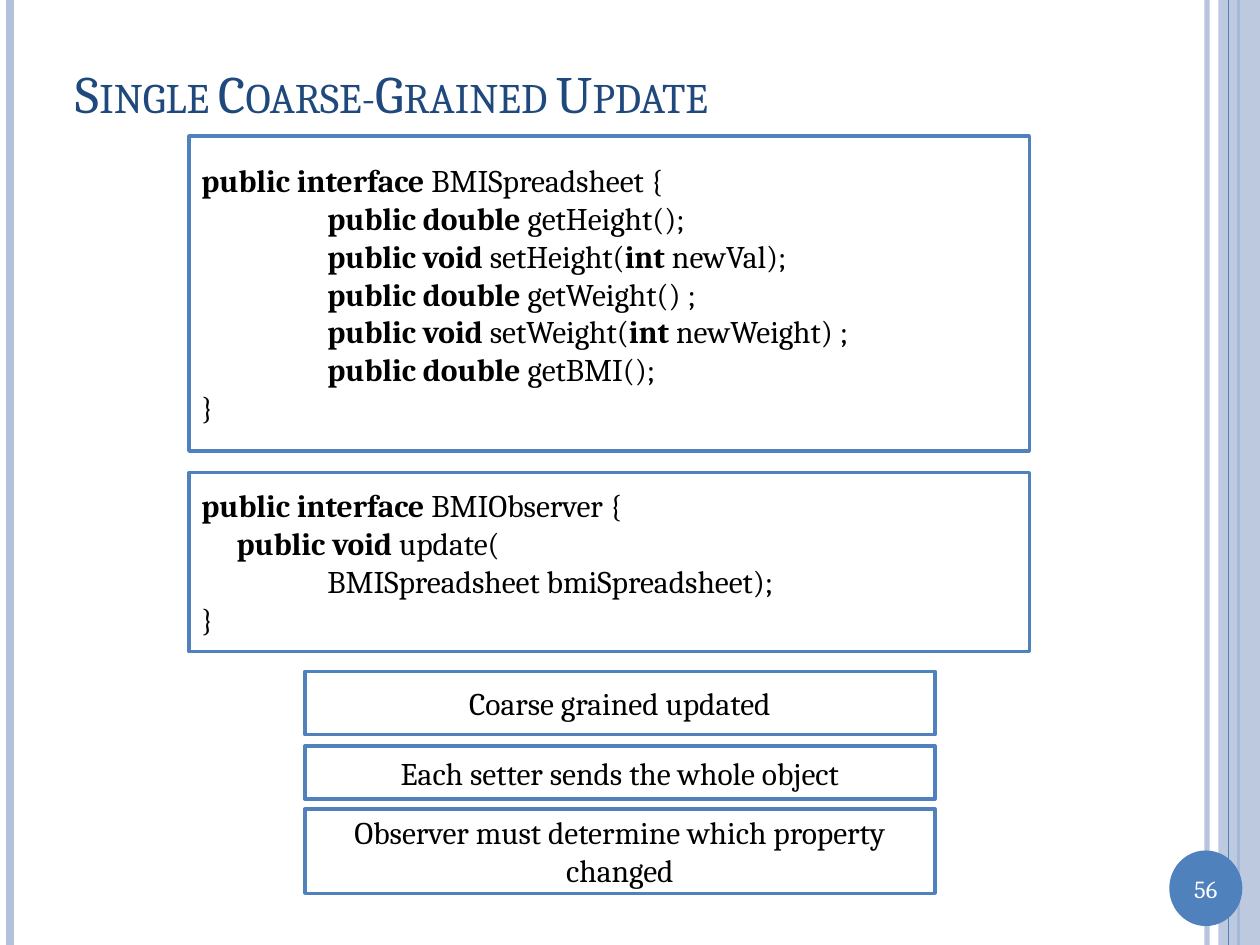
import pptx
import pptx.util
import pptx.dml.color
import pptx.enum.shapes
import pptx.enum.text
import pptx.oxml
import pptx.oxml.ns
from pptx.util import Inches

COLORS = {
    "blue": "4F81BD",
    "pale": "B3C1DB",
    "title": "1F497D",
    "white": "FFFFFF",
    "black": "000000",
}
FONT = "Cambria"
SHAPES = pptx.enum.shapes.MSO_SHAPE
ALIGN = pptx.enum.text.PP_ALIGN
MIDDLE = pptx.enum.text.MSO_ANCHOR.MIDDLE

SPREADSHEET_CODE = [
    (0, "**public interface **BMISpreadsheet {"),
    (1, "**public double **getHeight();"),
    (1, "**public void **setHeight(**int **newVal);"),
    (1, "**public double **getWeight() ;"),
    (1, "**public void **setWeight(**int **newWeight) ;"),
    (1, "**public double **getBMI();"),
    (0, "}"),
]
OBSERVER_CODE = [
    (0, "**public interface **BMIObserver {"),
    (0.28, "**public void** update("),
    (1, "BMISpreadsheet bmiSpreadsheet);"),
    (0, "}"),
]
NOTES = [
    (5.33, 0.5, "Coarse grained updated"),
    (5.92, 0.42, "Each setter sends the whole object"),
    (6.42, 0.67, "Observer must determine which property changed"),
]


def rgb(name):
    return pptx.dml.color.RGBColor.from_string(COLORS[name])


def style_run(r, size, color, bold=False):
    r.font.name = FONT
    r.font.size = pptx.util.Pt(size)
    r.font.bold = bold
    r.font.color.rgb = rgb(color)


def set_alpha(sp, percent):
    clr = next(sp._element.spPr.iter(pptx.oxml.ns.qn("a:srgbClr")))
    alpha = pptx.oxml.parse_xml(
        f'<a:alpha {pptx.oxml.ns.nsdecls("a")} val="{percent * 1000}"/>')
    clr.append(alpha)


def add_box(s, box, fill, line=None, kind=SHAPES.RECTANGLE):
    sp = s.shapes.add_shape(kind, *map(Inches, box))
    sp.shadow.inherit = False
    sp.fill.solid()
    sp.fill.fore_color.rgb = rgb(fill)
    if line:
        sp.line.color.rgb = rgb(line)
        sp.line.width = pptx.util.Pt(2)
    else:
        sp.line.fill.background()
    sp.text_frame.word_wrap = True
    sp.text_frame.vertical_anchor = MIDDLE
    return sp


def add_rule(s, x, height, color, width):
    ln = s.shapes.add_connector(pptx.enum.shapes.MSO_CONNECTOR.STRAIGHT,
                                Inches(x), 0, Inches(x), Inches(height))
    ln.line.color.rgb = rgb(color)
    ln.line.width = pptx.util.Pt(width)
    ln._element.spPr.append(
        pptx.oxml.parse_xml(f'<a:effectLst {pptx.oxml.ns.nsdecls("a")}/>'))
    return ln


def add_side_bands(s, height):
    set_alpha(add_rule(s, 9.58, height, "pale", 3), 93)
    add_rule(s, 0.08, height, "pale", 4.5)
    add_rule(s, 9.83, height, "blue", 1.5)
    set_alpha(add_box(s, (9.67, 0, 0.33, height), "pale"), 87)
    add_rule(s, 9.75, height, "blue", 0.75)


def add_page_number(s, box, number):
    sp = add_box(s, box, "blue", kind=SHAPES.OVAL)
    tf = sp.text_frame
    tf.margin_left = tf.margin_right = 0
    tf.text = number
    p = tf.paragraphs[0]
    p.alignment = ALIGN.CENTER
    style_run(p.runs[0], 14, "white")


def add_title(s, box, text):
    sp = s.shapes.title
    sp.left, sp.top, sp.width, sp.height = map(Inches, box)
    tf = sp.text_frame
    tf.text = text
    tf.vertical_anchor = MIDDLE
    p = tf.paragraphs[0]
    p.alignment = ALIGN.LEFT
    r = p.runs[0]
    style_run(r, 30, "title")
    r.font._element.set("cap", "small")


def add_code(s, box, lines):
    tf = add_box(s, box, "white", "blue").text_frame
    for i, (indent, line) in enumerate(lines):
        p = tf.add_paragraph() if i else tf.paragraphs[0]
        p.alignment = ALIGN.LEFT
        p._p.get_or_add_pPr().set("marL", str(Inches(indent)))
        for j, part in enumerate(line.split("**")):
            if part:
                r = p.add_run()
                r.text = part
                style_run(r, 18, "black", bold=j % 2 == 1)


def add_note(s, box, text):
    tf = add_box(s, box, "white", "blue").text_frame
    tf.text = text
    p = tf.paragraphs[0]
    p.alignment = ALIGN.CENTER
    style_run(p.runs[0], 18, "black")


def main():
    prs = pptx.Presentation()
    prs.slide_width, prs.slide_height = Inches(10), Inches(7.5)
    s = prs.slides.add_slide(prs.slide_layouts[5])
    add_side_bands(s, 7.5)
    add_page_number(s, (9.28, 6.75, 0.58, 0.6), "56")
    add_title(s, (0.5, 0.3, 8.67, 0.87), "Single Coarse-Grained Update")
    add_code(s, (1.5, 1.08, 6.67, 2.5), SPREADSHEET_CODE)
    add_code(s, (1.5, 3.75, 6.67, 1.42), OBSERVER_CODE)
    for top, height, text in NOTES:
        add_note(s, (2.42, top, 5, height), text)
    prs.save("out.pptx")


if __name__ == "__main__":
    main()
